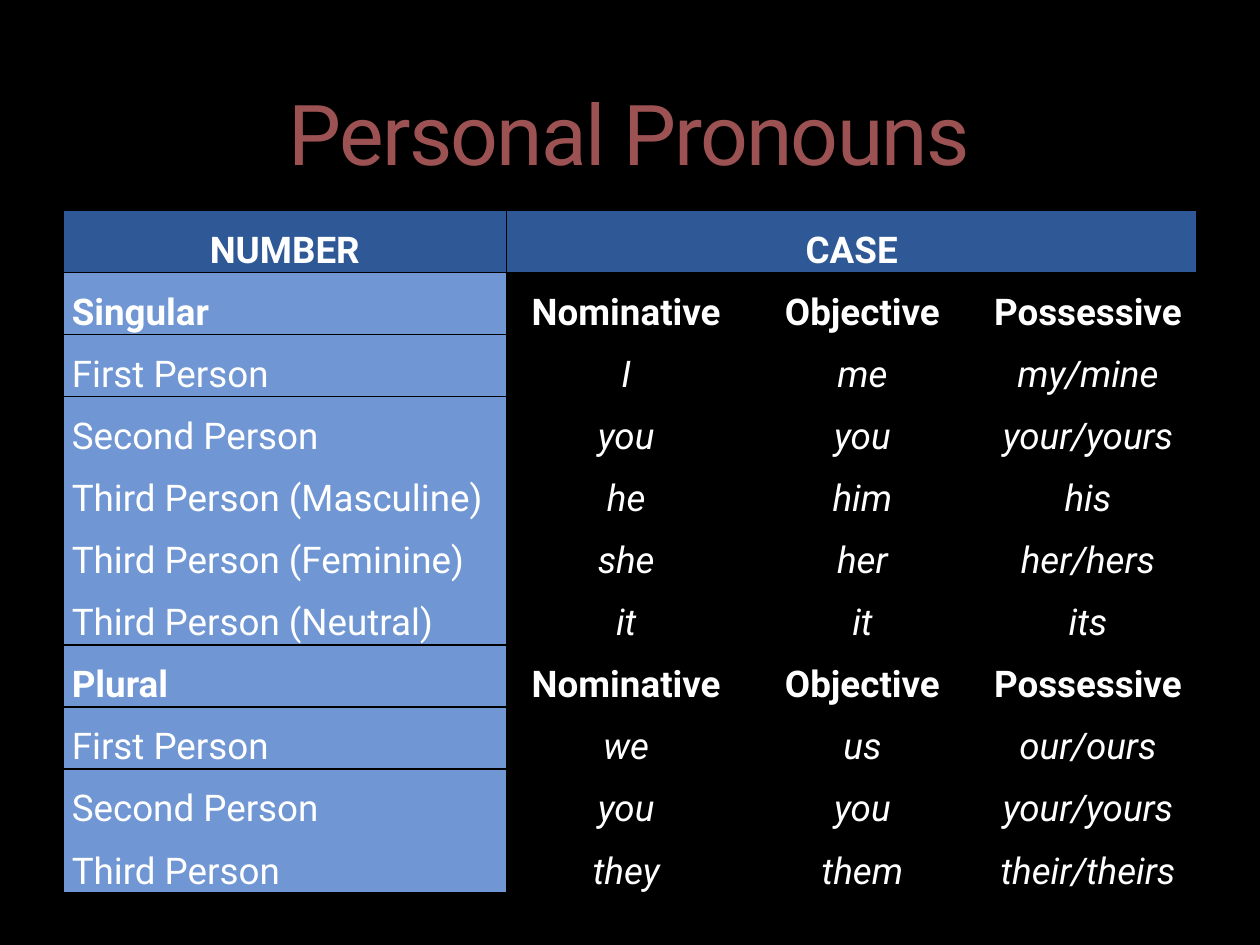
from lxml.etree import SubElement
from pptx import Presentation
from pptx.dml.color import RGBColor
from pptx.enum.text import MSO_ANCHOR, PP_ALIGN
from pptx.oxml import parse_xml
from pptx.oxml.ns import nsdecls, qn
from pptx.util import Inches, Pt

COLORS = {
    "black": "000000",
    "title": "9C5252",
    "outline": "294E85",
    "header": "2F5897",
    "label": "7097D3",
    "white": "FFFFFF",
}
NO_GRID_STYLE = "{2D5ABB26-0587-4C30-8999-92F81FD0307C}"
CASES = ["Nominative", "Objective", "Possessive"]
GROUPS = {
    "Singular": [
        ["First Person", "I", "me", "my/mine"],
        ["Second Person", "you", "you", "your/yours"],
        ["Third Person (Masculine)", "he", "him", "his"],
        ["Third Person (Feminine)", "she", "her", "her/hers"],
        ["Third Person (Neutral)", "it", "it", "its"],
    ],
    "Plural": [
        ["First Person", "we", "us", "our/ours"],
        ["Second Person", "you", "you", "your/yours"],
        ["Third Person", "they", "them", "their/theirs"],
    ],
}
COL_WIDTHS = [3.52, 1.9, 1.85, 1.73]


def rgb(name):
    return RGBColor.from_string(COLORS[name])


def write(tf, text, size=21, color="white", bold=False, italic=False,
          align=PP_ALIGN.CENTER):
    p = tf.paragraphs[0]
    p.alignment = align
    r = p.add_run()
    r.text = text
    r.font.name = "Roboto"
    r.font.size = Pt(size)
    r.font.bold = bold
    r.font.italic = italic
    r.font.color.rgb = rgb(color)
    return r


class Deck:
    def __init__(self):
        self.prs = Presentation()
        self.prs.slide_width = Inches(10)
        self.prs.slide_height = Inches(7.5)
        self.s = self.prs.slides.add_slide(self.prs.slide_layouts[5])
        fill = self.s.background.fill
        fill.solid()
        fill.fore_color.rgb = rgb("black")

    def title(self, text, left, top, width, height):
        sp = self.s.shapes.title
        sp.left, sp.top = Inches(left), Inches(top)
        sp.width, sp.height = Inches(width), Inches(height)
        tf = sp.text_frame
        tf.word_wrap = True
        tf.vertical_anchor = MSO_ANCHOR.BOTTOM
        r = write(tf, text, size=48, color="title")
        # Tight letter spacing and a faint text outline
        rPr = r.font._element
        rPr.set("spc", "-100")
        rPr.insert(0, parse_xml(
            f'<a:ln {nsdecls("a")} w="3175"><a:solidFill>'
            f'<a:srgbClr val="{COLORS["outline"]}"><a:alpha val="25000"/>'
            '</a:srgbClr></a:solidFill></a:ln>'))

    def table(self, rows, left, top, width, height):
        frame = self.s.shapes.add_table(
            rows, len(COL_WIDTHS), Inches(left), Inches(top),
            Inches(width), Inches(height))
        table = frame.table
        table.first_row = table.horz_banding = False
        table._tbl.tblPr.find(qn("a:tableStyleId")).text = NO_GRID_STYLE
        for column, w in zip(table.columns, COL_WIDTHS):
            column.width = Inches(w)
        for row in table.rows:
            row.height = Inches(height / rows)
        return table

    def cell(self, cell, text, fill=None, sides="LRTB", **style):
        cell.margin_left = cell.margin_right = Inches(0.07)
        cell.margin_top = cell.margin_bottom = 0
        cell.vertical_anchor = MSO_ANCHOR.BOTTOM
        tcPr = cell._tc.get_or_add_tcPr()
        for side in sides:
            ln = SubElement(tcPr, qn(f"a:ln{side}"), w=str(Pt(1)))
            solid = SubElement(ln, qn("a:solidFill"))
            SubElement(solid, qn("a:srgbClr"), val=COLORS["black"])
        if fill:
            cell.fill.solid()
            cell.fill.fore_color.rgb = rgb(fill)
        else:
            cell.fill.background()
        if text:
            write(cell.text_frame, text, **style)

    def row(self, table, index, texts, sides="LRTB", heading=False):
        label, *words = texts
        self.cell(table.cell(index, 0), label, fill="label", sides=sides,
                  bold=heading, align=PP_ALIGN.LEFT)
        for col, word in enumerate(words, 1):
            self.cell(table.cell(index, col), word, sides=sides,
                      bold=heading, italic=not heading)


def main():
    deck = Deck()
    deck.title("Personal Pronouns", 0.33, 0.17, 9.33, 1.33)

    # Header row, with CASE across the three case columns
    row_count = 1 + sum(1 + len(people) for people in GROUPS.values())
    table = deck.table(row_count, 0.5, 1.67, 9, 5.42)
    table.cell(0, 1).merge(table.cell(0, 3))
    for col, text in enumerate(["NUMBER", "CASE", "", ""]):
        deck.cell(table.cell(0, col), text, fill="header", bold=True)

    # Each group: a heading row, then people ruled only around the block
    index = 1
    for name, people in GROUPS.items():
        deck.row(table, index, [name] + CASES, heading=True)
        for n, person in enumerate(people, 1):
            sides = "LR" + "T" * (n == 1) + "B" * (n == len(people))
            deck.row(table, index + n, person, sides=sides)
        index += 1 + len(people)

    deck.prs.save("out.pptx")


if __name__ == "__main__":
    main()
